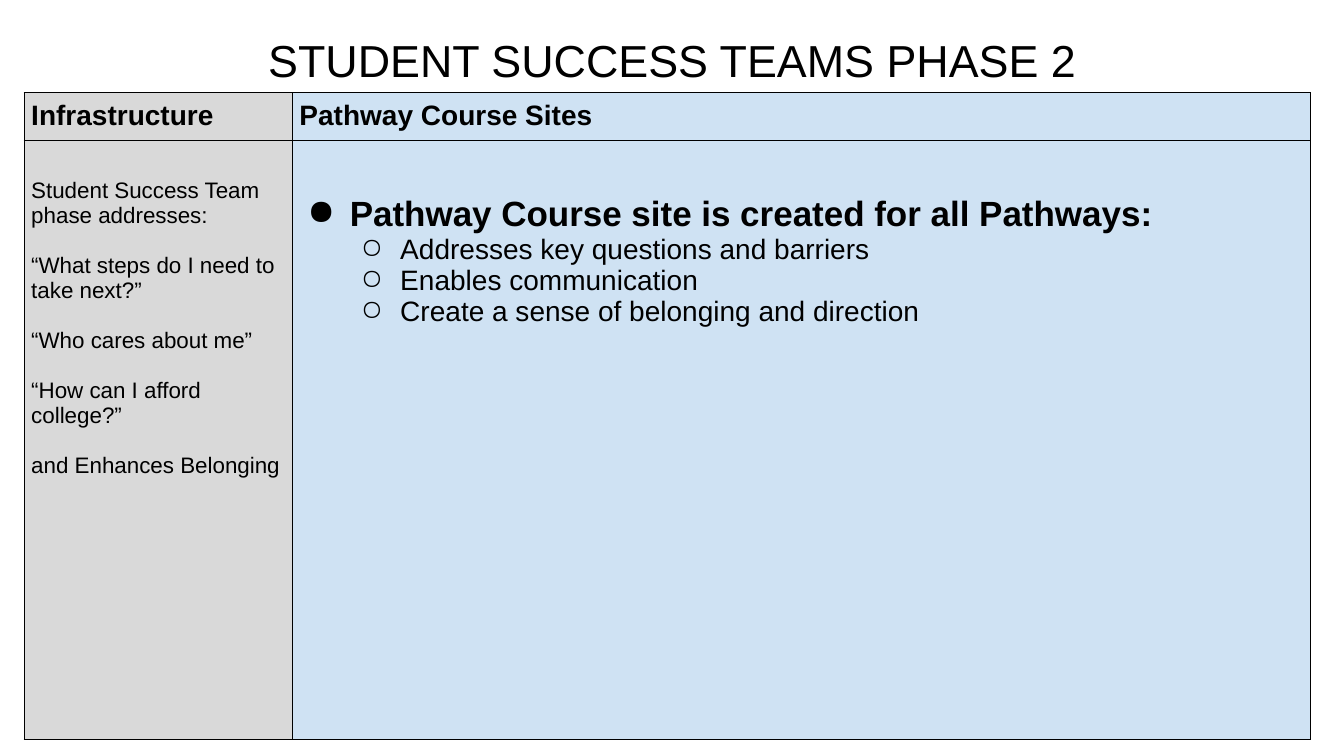
from lxml import etree
from pptx import Presentation
from pptx.dml.color import RGBColor
from pptx.enum.text import MSO_ANCHOR, PP_ALIGN
from pptx.oxml.ns import qn
from pptx.util import Inches, Pt

FONT = "Arial"
BLACK, GREY, BLUE = "000000", "D9D9D9", "CFE2F3"
CELL_MARGIN = 0.07

ADDRESSED = [
    "Student Success Team phase addresses:",
    "“What steps do I need to take next?”",
    "“Who cares about me”",
    "“How can I afford college?”",
    "and Enhances Belonging",
]
SITE_HEADING = "Pathway Course site is created for all Pathways:"
SITE_BENEFITS = [
    "Addresses key questions and barriers",
    "Enables communication",
    "Create a sense of belonging and direction",
]


def color(hex_value):
    return RGBColor.from_string(hex_value)


def write_paragraph(paragraph, text, size, bold=False):
    paragraph.text = text
    font = paragraph.runs[0].font
    font.name = FONT
    font.size = Pt(size)
    font.bold = bold
    font.color.rgb = color(BLACK)


def add_bullet(paragraph, character, left, hanging):
    properties = paragraph._p.get_or_add_pPr()
    properties.set("marL", str(Inches(left)))
    properties.set("indent", str(-Inches(hanging)))
    bullet_color = etree.SubElement(properties, qn("a:buClr"))
    etree.SubElement(bullet_color, qn("a:srgbClr"), val=BLACK)
    etree.SubElement(properties, qn("a:buChar"), char=character)


def add_borders(cell):
    properties = cell._tc.get_or_add_tcPr()
    for side in ("lnL", "lnR", "lnT", "lnB"):
        line = etree.SubElement(properties, qn(f"a:{side}"), w=str(Pt(1)))
        fill = etree.SubElement(line, qn("a:solidFill"))
        etree.SubElement(fill, qn("a:srgbClr"), val=BLACK)


def style_cell(cell, fill, top=CELL_MARGIN):
    cell.margin_left = cell.margin_right = cell.margin_bottom = Inches(CELL_MARGIN)
    cell.margin_top = Inches(top)
    cell.vertical_anchor = MSO_ANCHOR.TOP
    add_borders(cell)
    cell.fill.solid()
    cell.fill.fore_color.rgb = color(fill)


def add_paragraphs(text_frame, count):
    """Extend a new text frame to the given number of paragraphs."""
    for _ in range(count - 1):
        text_frame.add_paragraph()
    return text_frame.paragraphs


def fill_header(cell, text, fill):
    style_cell(cell, fill)
    write_paragraph(cell.text_frame.paragraphs[0], text, 20, bold=True)


def fill_infrastructure(cell):
    style_cell(cell, GREY, top=0.38)
    paragraphs = add_paragraphs(cell.text_frame, len(ADDRESSED))
    for index, (paragraph, text) in enumerate(zip(paragraphs, ADDRESSED)):
        write_paragraph(paragraph, text, 16)
        if index:
            paragraph.space_before = Pt(18)


def fill_sites(cell):
    style_cell(cell, BLUE, top=0.54)
    heading, *benefits = add_paragraphs(cell.text_frame, 1 + len(SITE_BENEFITS))
    write_paragraph(heading, SITE_HEADING, 25, bold=True)
    add_bullet(heading, "●", 0.5, 0.42)
    for paragraph, text in zip(benefits, SITE_BENEFITS):
        write_paragraph(paragraph, text, 20)
        paragraph.level = 1
        add_bullet(paragraph, "○", 1, 0.39)


def add_title(slide, left, top, width, height):
    title = slide.shapes.add_textbox(
        Inches(left), Inches(top), Inches(width), Inches(height))
    frame = title.text_frame
    frame.word_wrap = True
    frame.margin_left = frame.margin_right = Inches(0.13)
    frame.margin_top = frame.margin_bottom = Inches(0.13)
    paragraph = frame.paragraphs[0]
    write_paragraph(paragraph, "STUDENT SUCCESS TEAMS PHASE 2", 32)
    paragraph.alignment = PP_ALIGN.CENTER
    paragraph.line_spacing = 1.1


def add_phase_table(slide, left, top, width, height):
    first_column, header_height = 2.66, 0.46
    table = slide.shapes.add_table(
        2, 2, Inches(left), Inches(top), Inches(width), Inches(height)).table
    table.horz_banding = False
    table.columns[0].width = Inches(first_column)
    table.columns[1].width = Inches(width - first_column)
    table.rows[0].height = Inches(header_height)
    table.rows[1].height = Inches(height - header_height)
    fill_header(table.cell(0, 0), "Infrastructure", GREY)
    fill_header(table.cell(0, 1), "Pathway Course Sites", BLUE)
    fill_infrastructure(table.cell(1, 0))
    fill_sites(table.cell(1, 1))


def main():
    presentation = Presentation()
    presentation.slide_width = Inches(13.33)
    presentation.slide_height = Inches(7.5)
    slide = presentation.slides.add_slide(presentation.slide_layouts[6])
    add_title(slide, 0.44, 0.14, 12.46, 1.59)
    add_phase_table(slide, 0.24, 0.92, 12.76, 6.4)
    presentation.save("out.pptx")


if __name__ == "__main__":
    main()
